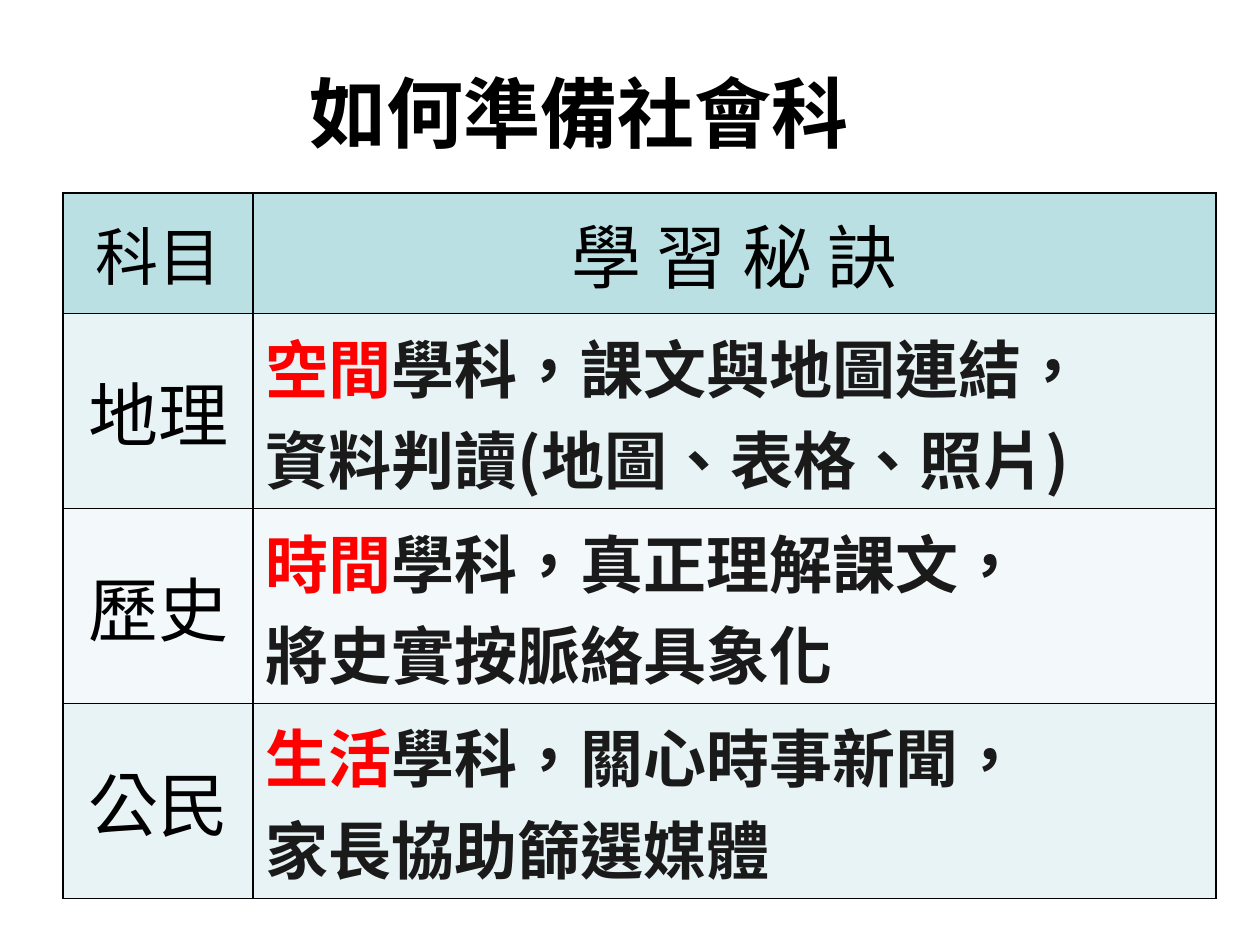
"""Build a slide with a table of study tips for social studies."""
from lxml import etree
from pptx import Presentation, dml
from pptx.dml.color import RGBColor
from pptx.enum import text as t
from pptx.oxml import ns
from pptx.util import Inches, Pt

TITLE = "如何準備社會科"
HEAD = [("科目", 36), ("學 習 秘 訣", 40)]
ROWS = [
    ("地理", "空間", ["學科，課文與地圖連結，", "資料判讀(地圖、表格、照片)"], "E7F3F4"),
    ("歷史", "時間", ["學科，真正理解課文，", "將史實按脈絡具象化"], "F3F9FA"),
    ("公民", "生活", ["學科，關心時事新聞，", "家長協助篩選媒體"], "E7F3F4"),
]
COLS = [1.51, 7.64]
TOP, TALL = 0.96, 1.34
PLAIN, BOLD = "Noto Sans CJK JP", "Noto Sans CJK SC"


def paint(run, size, color="000000", bold=False):
    """Format one run, for Latin and Chinese letters alike."""
    font = run.font
    font.size, font.bold = Pt(size), bold
    font.color.rgb = RGBColor.from_string(color)
    font.name = BOLD if bold else PLAIN
    props = run._r.get_or_add_rPr()
    props.set("lang", "zh-TW")
    etree.SubElement(props, ns.qn("a:ea"), typeface=font.name)


def frame(cell, color):
    """Give a cell its borders, fill and anchor."""
    cell.vertical_anchor = t.MSO_ANCHOR.MIDDLE
    props = cell._tc.get_or_add_tcPr()
    for side in ("lnL", "lnR", "lnT", "lnB"):
        line = etree.SubElement(props, ns.qn(f"a:{side}"), w=str(Pt(1)))
        fill = etree.SubElement(line, ns.qn("a:solidFill"))
        etree.SubElement(fill, ns.qn("a:srgbClr"), val="000000")
    cell.fill.solid()
    cell.fill.fore_color.rgb = RGBColor.from_string(color)


def label(cell, words, size, color):
    """Fill a cell with one centred line."""
    frame(cell, color)
    cell.text_frame.text = words
    para = cell.text_frame.paragraphs[0]
    para.alignment = t.PP_ALIGN.CENTER
    paint(para.runs[0], size)


def tip(cell, key, lines, color):
    """Fill a cell with a red key word and its lines of advice."""
    frame(cell, color)
    para = cell.text_frame.paragraphs[0]
    para.alignment = t.PP_ALIGN.LEFT
    run = para.add_run()
    run.text = key
    paint(run, 36, "FF0000", True)
    for i, words in enumerate(lines):
        if i:
            para.add_line_break()
        run = para.add_run()
        run.text = words
        paint(run, 36, "1A1A1A", True)


def main():
    """Make the slide and save it."""
    deck = Presentation()
    deck.slide_width, deck.slide_height = Inches(10), Inches(7.5)
    slide = deck.slides.add_slide(deck.slide_layouts[5])

    title = slide.shapes.title
    title.left, title.top = Inches(1.53), Inches(0.46)
    title.width, title.height = Inches(6.14), Inches(0.85)
    title.text_frame.text = TITLE
    title.text_frame.vertical_anchor = t.MSO_ANCHOR.MIDDLE
    para = title.text_frame.paragraphs[0]
    para.alignment = t.PP_ALIGN.CENTER
    paint(para.runs[0], 44, bold=True)

    high = TOP + TALL * len(ROWS)
    grid = slide.shapes.add_table(
        len(ROWS) + 1, len(COLS), Inches(0.5), Inches(1.53),
        Inches(sum(COLS)), Inches(high)).table
    for col, wide in zip(grid.columns, COLS):
        col.width = Inches(wide)
    for i, row in enumerate(grid.rows):
        row.height = Inches(TALL if i else TOP)

    for i, (words, size) in enumerate(HEAD):
        label(grid.cell(0, i), words, size, "BBE0E3")
    for i, (name, key, lines, color) in enumerate(ROWS, 1):
        label(grid.cell(i, 0), name, 40, color)
        tip(grid.cell(i, 1), key, lines, color)
    deck.save("out.pptx")


if __name__ == "__main__":
    main()
